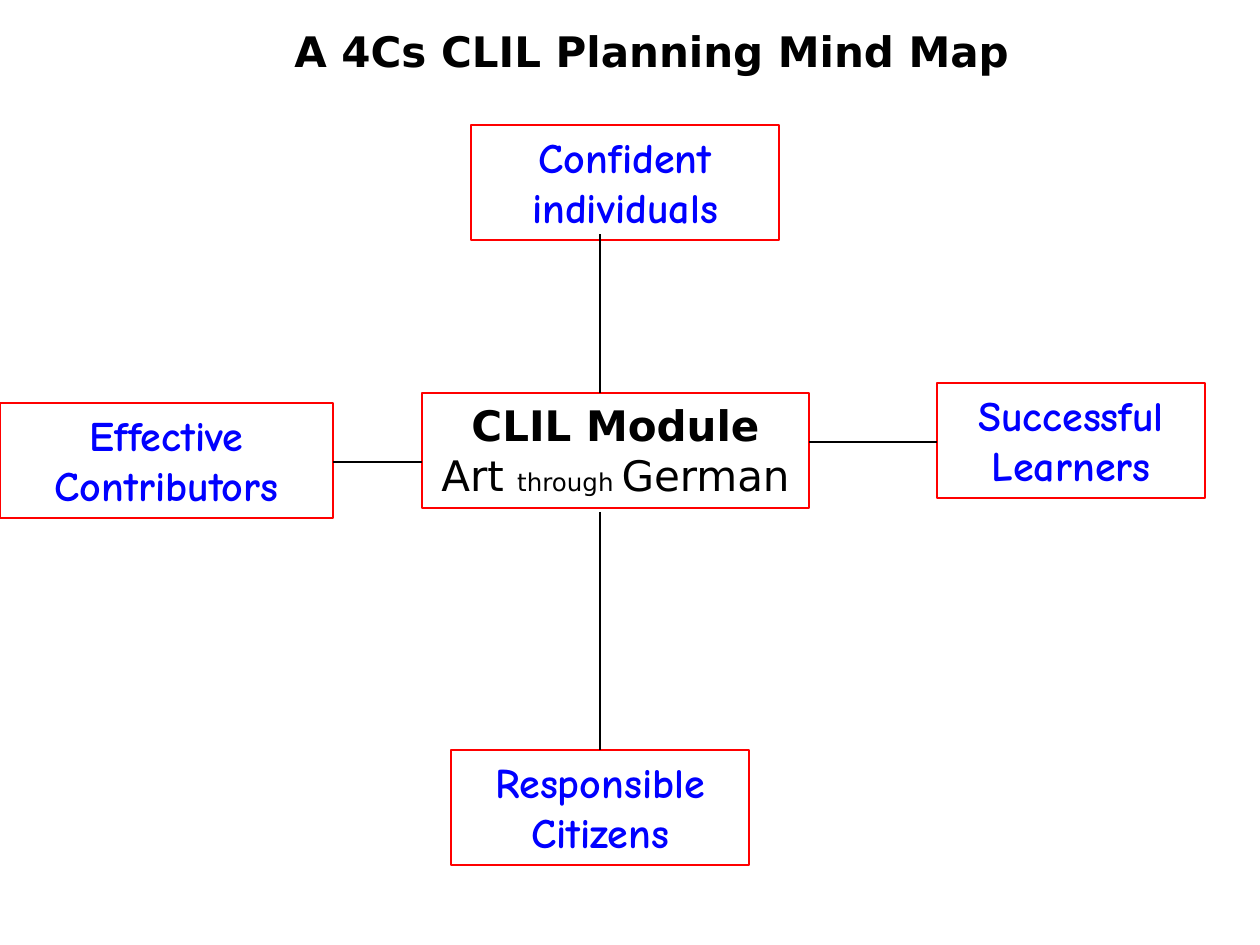
from dataclasses import dataclass

from lxml import etree
from pptx import Presentation
from pptx import util as u
from pptx.dml.color import RGBColor
from pptx.enum import shapes, text
from pptx.oxml.ns import qn

EMU_PER_PX = 914400 / 126
COLOURS = {"border": "FF0000", "topic": "0000FF", "ink": "000000"}
TOPIC_FONT = "Comic Neue"
MAIN_FONT = "DejaVu Sans"
TEXT_SIZE = 24
SMALL_SIZE = 14
LINE_WIDTH = u.Pt(0.75)
BOX_HEIGHT = 115


@dataclass(frozen=True)
class Topic:
    left: int
    top: int
    width: int
    lines: tuple[str, ...]


@dataclass(frozen=True)
class Link:
    start: tuple[int, int]
    end: tuple[int, int]


TOPICS = (
    Topic(471, 125, 308, ("Confident individuals",)),
    Topic(0, 403, 333, ("Effective", "Contributors")),
    Topic(451, 750, 298, ("Responsible", "Citizens")),
    Topic(937, 383, 268, ("Successful", "Learners")),
)
MODULE = Topic(422, 393, 387, ("CLIL Module",))
LINKS = (
    Link((600, 393), (600, 234)),
    Link((809, 442), (937, 442)),
    Link((333, 462), (422, 462)),
    Link((600, 512), (600, 750)),
)


def px(length: int) -> int:
    return round(length * EMU_PER_PX)


def colour(name: str) -> RGBColor:
    return RGBColor.from_string(COLOURS[name])


def style_paragraph(para, font: str, ink: str, bold: bool = True) -> None:
    para.font.name = font
    para.font.size = u.Pt(TEXT_SIZE)
    para.font.bold = bold
    para.font.color.rgb = colour(ink)


def add_box(page, topic: Topic, font: str, ink: str):
    """Draw an outlined box with centred lines and return its text frame."""
    box = page.shapes.add_shape(
        shapes.MSO_SHAPE.RECTANGLE,
        px(topic.left), px(topic.top), px(topic.width), px(BOX_HEIGHT),
    )
    box.shadow.inherit = False
    box.fill.background()
    box.line.color.rgb = colour("border")
    box.line.width = LINE_WIDTH
    frame = box.text_frame
    frame.word_wrap = True
    frame.vertical_anchor = text.MSO_ANCHOR.TOP
    frame.text = "\n".join(topic.lines)
    for para in frame.paragraphs:
        para.alignment = text.PP_ALIGN.CENTER
        style_paragraph(para, font, ink)
    return frame


def add_module(page) -> None:
    frame = add_box(page, MODULE, MAIN_FONT, "ink")
    para = frame.add_paragraph()
    para.alignment = text.PP_ALIGN.CENTER
    style_paragraph(para, MAIN_FONT, "ink", bold=False)
    for words, size in (
        ("Art ", TEXT_SIZE), ("through ", SMALL_SIZE), ("German", TEXT_SIZE)
    ):
        span = para.add_run()
        span.text = words
        span.font.size = u.Pt(size)


def add_link(page, link: Link) -> None:
    connector = page.shapes.add_connector(
        shapes.MSO_CONNECTOR.STRAIGHT,
        *(px(value) for value in link.start + link.end),
    )
    connector.line.color.rgb = colour("ink")
    connector.line.width = LINE_WIDTH
    etree.SubElement(connector._element.spPr, qn("a:effectLst"))


def add_title(page) -> None:
    box = page.shapes.add_textbox(px(282), px(19), px(794), px(63))
    box.text_frame.word_wrap = True
    para = box.text_frame.paragraphs[0]
    para.text = "A 4Cs CLIL Planning Mind Map"
    style_paragraph(para, MAIN_FONT, "ink")


def main() -> None:
    deck = Presentation()
    deck.slide_width, deck.slide_height = px(1260), px(945)
    page = deck.slides.add_slide(deck.slide_layouts[6])
    for topic in TOPICS:
        add_box(page, topic, TOPIC_FONT, "topic")
    add_module(page)
    for link in LINKS:
        add_link(page, link)
    add_title(page)
    deck.save("out.pptx")


if __name__ == "__main__":
    main()
